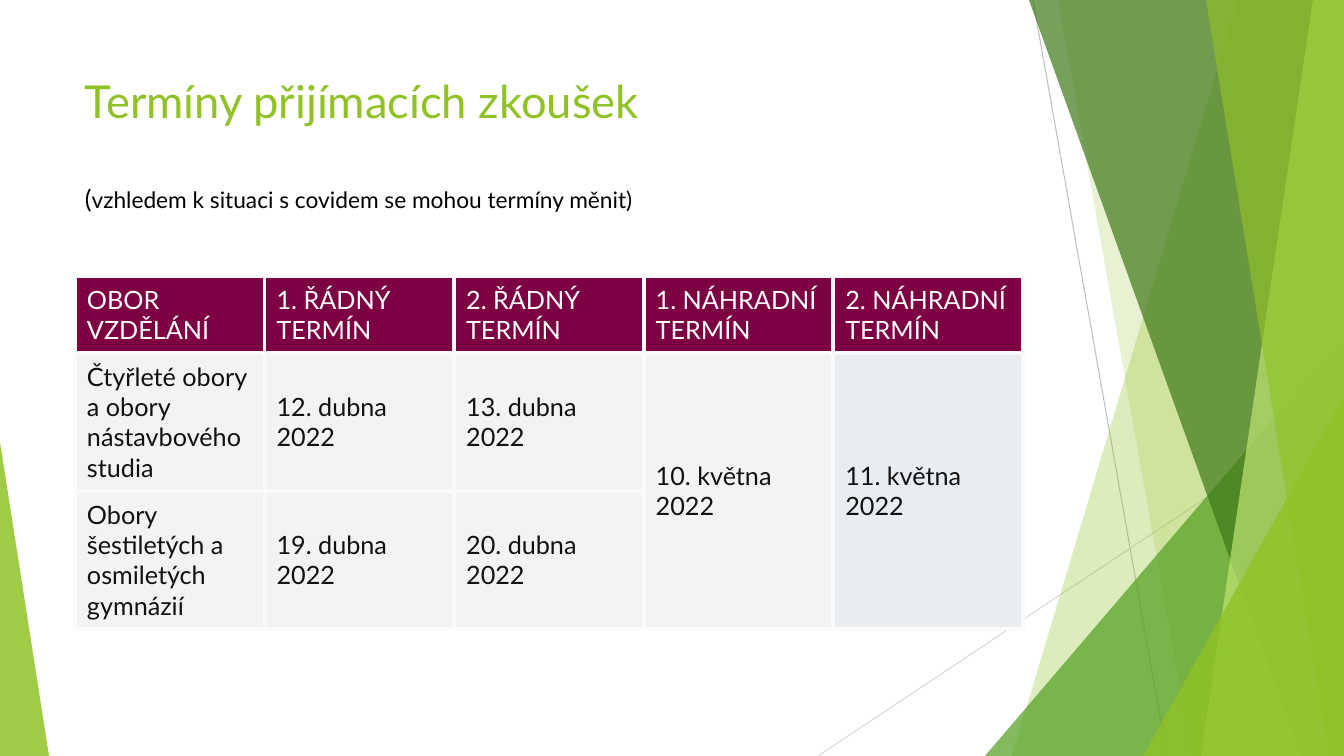
from lxml import etree
from pptx import Presentation, util as u
from pptx.dml.color import RGBColor
from pptx.enum import shapes, text
from pptx.oxml import ns

LIME = RGBColor(0x90, 0xC2, 0x26)
GREEN = RGBColor(0x54, 0xA0, 0x21)
DARK = RGBColor(0x3F, 0x78, 0x19)
PALE = RGBColor(0xC0, 0xE4, 0x74)
SILVER = RGBColor(0xBF, 0xBF, 0xBF)
MIST = RGBColor(0xD9, 0xD9, 0xD9)
WHITE = RGBColor(0xFF, 0xFF, 0xFF)
BLACK = RGBColor(0, 0, 0)
INK = RGBColor(0x11, 0x11, 0x11)
WINE = RGBColor(0x7D, 0x00, 0x43)
CLOUD = RGBColor(0xF1, 0xF3, 0xF5)
FOG = RGBColor(0xEA, 0xED, 0xF0)
RULE = RGBColor(0xFA, 0xFA, 0xFA)
WIDE, HIGH = 1344, 756


def px(n):
    return u.Inches(n / 100.8)


def sub(node, tag, **attrs):
    return etree.SubElement(node, ns.qn(tag), **attrs)


class Deck:
    """Holds the style and the current slide, and draws each kind of element."""

    def __init__(self, font):
        self.font = font
        self.prs = Presentation()
        self.prs.slide_width, self.prs.slide_height = px(WIDE), px(HIGH)
        self.slide = self.prs.slides.add_slide(self.prs.slide_layouts[6])
        self.draw = self.slide.shapes

    def line(self, x1, y1, x2, y2, color):
        link = self.draw.add_connector(shapes.MSO_CONNECTOR.STRAIGHT, px(x1), px(y1), px(x2), px(y2))
        link.line.color.rgb = color
        link.line.width = u.Pt(0.75)
        sub(link._element.spPr, "a:effectLst")

    def tint(self, shape, color, alpha):
        shape.shadow.inherit = False
        shape.line.fill.background()
        shape.fill.solid()
        shape.fill.fore_color.rgb = color
        tone = shape._element.spPr.find(ns.qn("a:solidFill"))[0]
        sub(tone, "a:alpha", val=str(alpha * 1000))

    def band(self, top, foot, color, alpha):
        form = self.draw.build_freeform(top, 0, scale=px(1000) / 1000)
        form.add_line_segments([(WIDE, 0), (WIDE, HIGH), (foot, HIGH)])
        self.tint(form.convert_to_shape(), color, alpha)

    def wedge(self, x, y, w, apex, color, alpha):
        kind = shapes.MSO_SHAPE.ISOSCELES_TRIANGLE
        shape = self.draw.add_shape(kind, px(x), px(y), px(w), px(HIGH - y))
        shape.adjustments[0] = apex
        self.tint(shape, color, alpha)

    def run(self, para, words, size, color):
        run = para.add_run()
        run.text = words
        run.font.name, run.font.size, run.font.bold = self.font, u.Pt(size), False
        run.font.color.rgb = color

    def title(self, x, y, w, h, paras, gap):
        frame = self.draw.add_textbox(px(x), px(y), px(w), px(h)).text_frame
        frame.word_wrap = True
        for i, runs in enumerate(paras):
            para = frame.add_paragraph() if i else frame.paragraphs[0]
            para.space_before = u.Pt(gap if i else 0)
            for words, size, color in runs:
                self.run(para, words, size, color)

    def cell(self, cell, words, color, fill):
        cell.margin_left = cell.margin_right = px(12)
        cell.margin_top = cell.margin_bottom = px(8)
        cell.vertical_anchor = text.MSO_ANCHOR.MIDDLE
        if words:
            self.run(cell.text_frame.paragraphs[0], words, 18, color)
        props = cell._tc.get_or_add_tcPr()
        for side in ("a:lnL", "a:lnR", "a:lnT", "a:lnB"):
            edge = sub(props, side, w=str(u.Pt(3)))
            sub(sub(edge, "a:solidFill"), "a:srgbClr", val=str(RULE))
        cell.fill.solid()
        cell.fill.fore_color.rgb = fill

    def table(self, x, y, w, highs, rows, merges):
        cols = len(rows[0])
        grid = self.draw.add_table(len(rows), cols, px(x), px(y), px(w), px(sum(highs))).table
        for r, (high, row) in enumerate(zip(highs, rows)):
            grid.rows[r].height = px(high)
            for c, words in enumerate(row):
                body = FOG if c == cols - 1 else CLOUD
                color, fill = (INK, body) if r else (WHITE, WINE)
                self.cell(grid.cell(r, c), words, color, fill)
        for (r1, c1), (r2, c2) in merges:
            grid.cell(r1, c1).merge(grid.cell(r2, c2))


def main():
    deck = Deck("Lato")
    deck.line(1033, 0, 1167, HIGH, SILVER)
    deck.line(WIDE, 406, 818, HIGH, MIST)
    deck.band(1238, 1012, LIME, 30)
    deck.band(1058, 1192, LIME, 20)
    deck.wedge(985, 336, 359, 1, GREEN, 72)
    deck.band(1029, 1301, DARK, 70)
    deck.band(1313, 1201, PALE, 70)
    deck.band(1206, 1329, LIME, 65)
    deck.wedge(1143, 396, 201, 1, LIME, 80)
    deck.wedge(0, 442, 49, 0, LIME, 85)
    deck.title(75, 68, 948, 145, [
        [("Termíny přijímacích zkoušek", 32.4, LIME)],
        [("(", 18, BLACK), ("vzhledem k situaci s covidem se mohou termíny měnit)", 16.2, BLACK)],
    ], gap=40)
    deck.table(75, 276, 948, [77, 138, 138], [
        ["OBOR VZDĚLÁNÍ", "1. ŘÁDNÝ TERMÍN", "2. ŘÁDNÝ TERMÍN",
         "1. NÁHRADNÍ TERMÍN", "2. NÁHRADNÍ TERMÍN"],
        ["Čtyřleté obory a obory nástavbového studia", "12. dubna 2022",
         "13. dubna 2022", "10. května 2022", "11. května 2022"],
        ["Obory šestiletých a osmiletých gymnázií", "19. dubna 2022",
         "20. dubna 2022", "", ""],
    ], merges=[((1, c), (2, c)) for c in (3, 4)])
    deck.prs.save("out.pptx")


if __name__ == "__main__":
    main()
